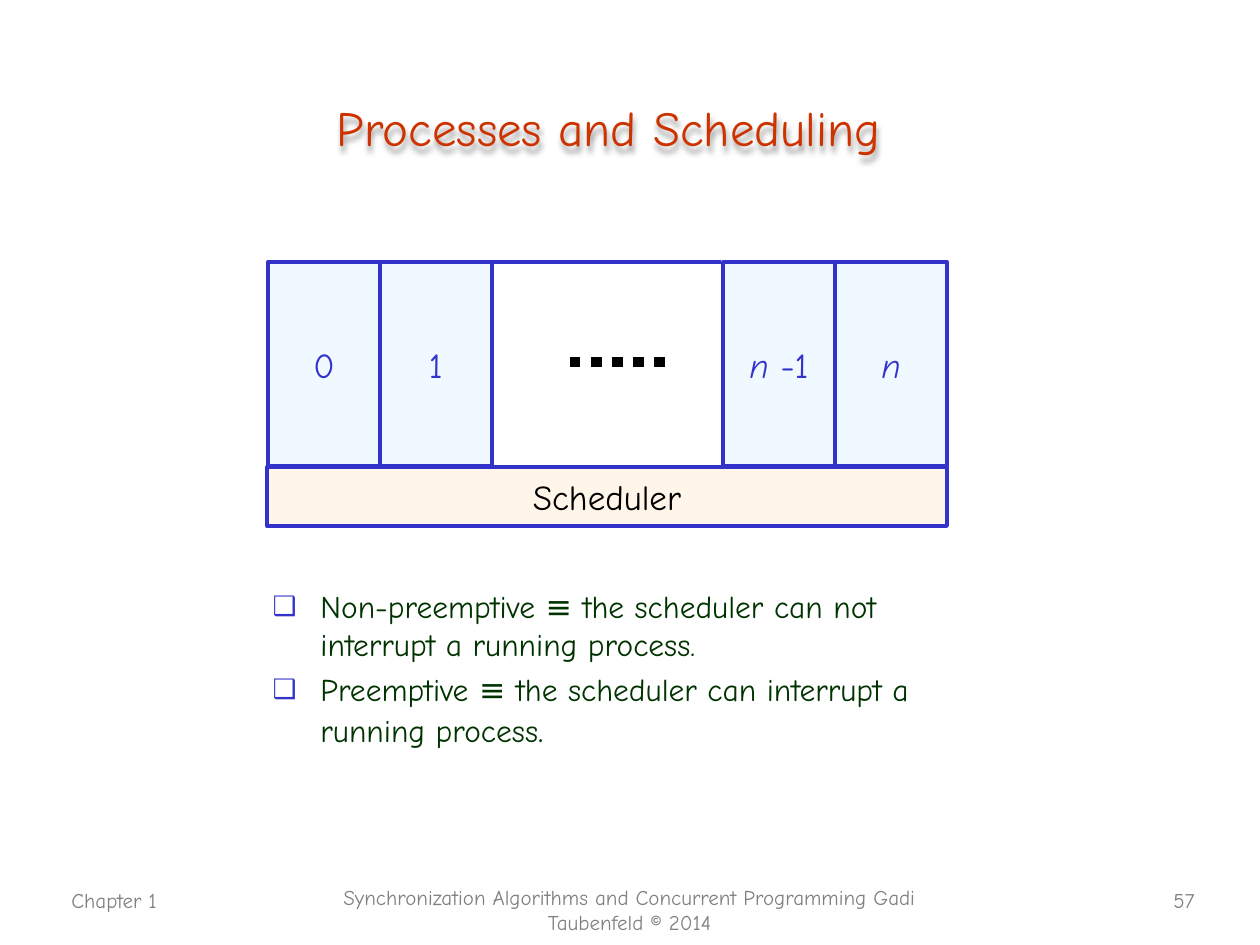
from lxml import etree
from pptx import Presentation, util as u
from pptx.dml.color import RGBColor
from pptx.enum import dml, shapes, text
from pptx.oxml.ns import qn

PX = 914400 / 126  # EMU in one px
COLORS = {
    "title": "CC3300", "line": "3333CC", "process": "EFF9FF",
    "scheduler": "FFF6E9", "body": "003300", "footer": "808080",
    "black": "000000",
}
CENTER, RIGHT = text.PP_ALIGN.CENTER, text.PP_ALIGN.RIGHT


def px(*lengths):
    return [u.Emu(round(n * PX)) for n in lengths]


def child(parent, tag, **attributes):
    return etree.SubElement(parent, qn(tag), attributes)


class SlideBuilder:
    font = "Comic Neue"

    def __init__(self, slide):
        self.slide = slide

    def place(self, shape, box):
        for name, value in zip(("left", "top", "width", "height"), px(*box)):
            setattr(shape, name, value)

    def add_runs(self, paragraph, runs, color, align=None):
        """Each run is (wording, font format)."""
        paragraph.alignment = align
        for wording, style in runs:
            run = paragraph.add_run()
            run.text = wording
            for name, value in {"name": self.font, **style}.items():
                setattr(run.font, name, value)
            run.font.color.rgb = RGBColor.from_string(COLORS[color])

    def title(self, box, wording):
        heading = self.slide.shapes.title
        self.place(heading, box)
        heading.text_frame.vertical_anchor = text.MSO_ANCHOR.MIDDLE
        self.add_runs(heading.text_frame.paragraphs[0],
                      [(wording, {"size": u.Pt(28)})], "title", CENTER)
        # Soft shadow under the letters
        heading.fill.background()
        effects = child(heading.element.spPr, "a:effectLst")
        shadow = child(effects, "a:outerShdw", blurRad="38100", dist="38100",
                       dir="5400000", algn="tl", rotWithShape="0")
        child(child(shadow, "a:srgbClr", val=COLORS["black"]),
              "a:alpha", val="40000")

    def bullets(self, box, items):
        body = self.slide.placeholders[1]
        self.place(body, box)
        frame = body.text_frame
        frame.auto_size = text.MSO_AUTO_SIZE.NONE
        for i, runs in enumerate(items):
            paragraph = frame.add_paragraph() if i else frame.paragraphs[0]
            self.add_runs(paragraph, runs, "body")
            props = paragraph._p.get_or_add_pPr()
            indent = u.Inches(0.38)
            props.set("marL", str(indent))
            props.set("indent", str(-indent))
            child(child(props, "a:buClr"), "a:srgbClr", val=COLORS["line"])
            child(props, "a:buSzPct", val="85000")
            child(props, "a:buChar", char="❑")

    def label(self, box, wording, align=None):
        frame = self.slide.shapes.add_textbox(*px(*box)).text_frame
        frame.word_wrap = True
        self.add_runs(frame.paragraphs[0], [(wording, {"size": u.Pt(12)})],
                      "footer", align)

    def box(self, box, runs, fill, color, wrap=False):
        rect = self.slide.shapes.add_shape(
            shapes.MSO_SHAPE.RECTANGLE, *px(*box))
        rect.shadow.inherit = False
        rect.fill.solid()
        rect.fill.fore_color.rgb = RGBColor.from_string(COLORS[fill])
        rect.line.color.rgb = RGBColor.from_string(COLORS["line"])
        rect.line.width = u.Pt(2.25)
        frame = rect.text_frame
        frame.word_wrap = wrap
        frame.vertical_anchor = text.MSO_ANCHOR.MIDDLE
        self.add_runs(frame.paragraphs[0],
                      [(t, {"size": u.Pt(20), **s}) for t, s in runs],
                      color, CENTER)

    def line(self, ends, color, width, dash=None):
        rule = self.slide.shapes.add_connector(
            shapes.MSO_CONNECTOR.STRAIGHT, *px(*ends))
        rule.line.color.rgb = RGBColor.from_string(COLORS[color])
        rule.line.width = u.Pt(width)
        if dash:
            rule.line.dash_style = dash
        child(rule._element.spPr, "a:effectLst")


def main():
    deck = Presentation()
    deck.slide_width, deck.slide_height = px(1260, 945)
    page = SlideBuilder(deck.slides.add_slide(deck.slide_layouts[1]))

    # Footer
    page.label((1148, 881, 59, 38), "57", RIGHT)
    page.label((59, 881, 262, 63), "Chapter 1")
    page.label((325, 878, 609, 63), "Synchronization Algorithms and Concurrent "
               "Programming Gadi Taubenfeld © 2014", CENTER)

    page.title((73, 62, 1071, 130), "Processes and Scheduling")

    # Processes: two cells on each side of the gap
    italic = {"italic": True}
    left, top, width, height = 268, 262, 112, 204
    right = 723
    processes = [
        (left, [("0", {})]),
        (left + width, [("1", {})]),
        (right, [("n ", italic), ("-1", {})]),
        (right + width, [("n", italic)]),
    ]
    for x, runs in processes:
        page.box((x, top, width, height), runs, "process", "line")
    page.line((left + 2 * width, top, right - 2, top), "line", 2.25)
    page.line((570, 362, 665, 362), "black", 6, dml.MSO_LINE.ROUND_DOT)

    # Scheduler under all processes
    page.box((267, 467, 680, 59), [("Scheduler", {})],
             "scheduler", "black", wrap=True)

    # Definitions
    size = {"size": u.Pt(18)}
    page.bullets((260, 581, 687, 207), [
        [("Non-preemptive ≡ the scheduler can not interrupt a running "
          "process.", size)],
        [("Preemptive ≡ the scheduler can interrupt a running process", size),
         (".", {"size": u.Pt(20)})],
    ])

    deck.save("out.pptx")


if __name__ == "__main__":
    main()
